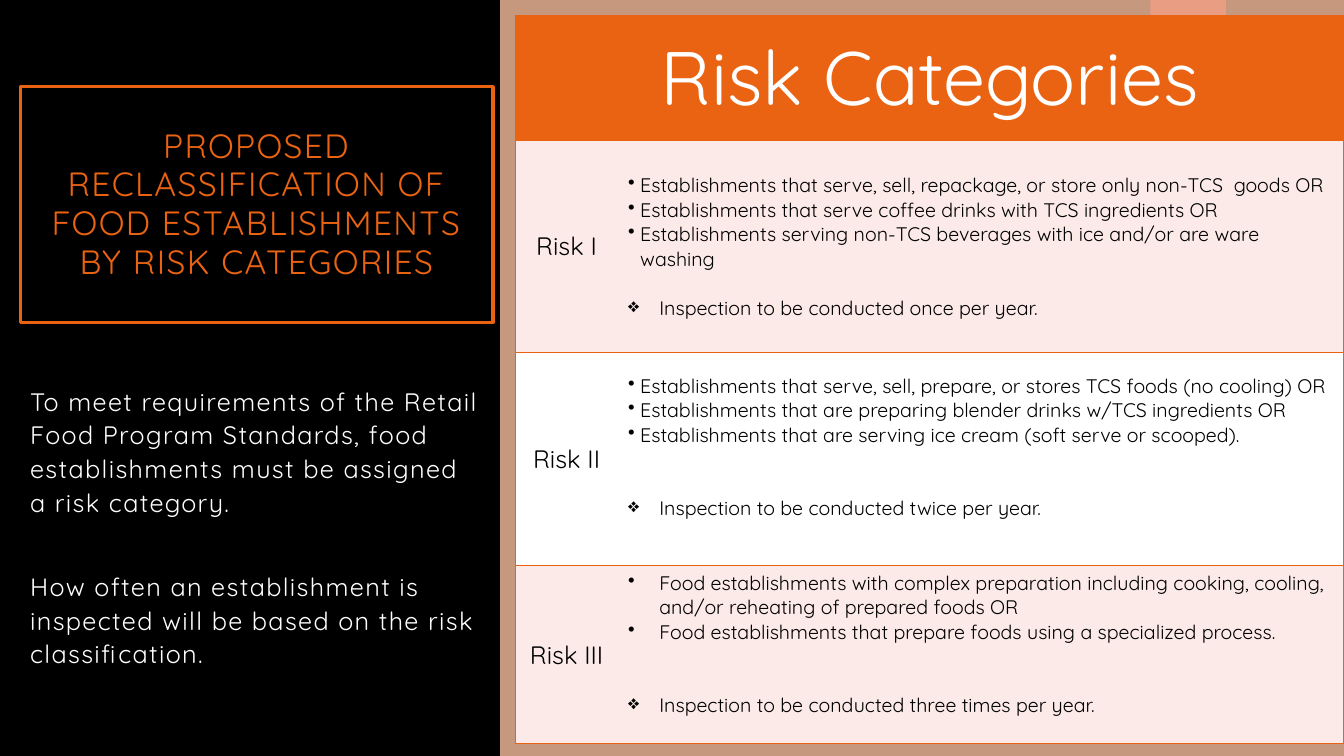
from dataclasses import dataclass

import pptx
import pptx.dml.color
import pptx.enum.shapes
import pptx.enum.text
import pptx.oxml
import pptx.oxml.ns
import pptx.util
from pptx.util import Inches

COLORS = {
    "black": "000000",
    "white": "FFFFFF",
    "orange": "EA6312",
    "peach": "F8C09F",
    "red": "B01513",
    "blush": "FBEAE7",
}
FONT = "Quicksand"
BLANK_LINE = 17.5
CENTER = pptx.enum.text.PP_ALIGN.CENTER
MIDDLE = pptx.enum.text.MSO_ANCHOR.MIDDLE


@dataclass
class RiskCategory:
    name: str
    criteria: list[str]
    inspection: str
    fill: str
    blank_lines: int
    hanging: float = 0.12
    bottom_margin: float = 0.29


RISKS = [
    RiskCategory("Risk I", [
        "Establishments that serve, sell, repackage, or store only non-TCS  goods OR",
        "Establishments that serve coffee drinks with TCS ingredients OR",
        "Establishments serving non-TCS beverages with ice and/or are ware washing",
    ], "Inspection to be conducted once per year.", "blush", 1, bottom_margin=0.05),
    RiskCategory("Risk II", [
        "Establishments that serve, sell, prepare, or stores TCS foods (no cooling) OR",
        "Establishments that are preparing blender drinks w/TCS ingredients OR",
        "Establishments that are serving ice cream (soft serve or scooped).",
    ], "Inspection to be conducted twice per year.", "white", 2),
    RiskCategory("Risk III", [
        "Food establishments with complex preparation including cooking, cooling, "
        "and/or reheating of prepared foods OR",
        "Food establishments that prepare foods using a specialized process.",
    ], "Inspection to be conducted three times per year.", "blush", 2, hanging=0.31),
]


def rgb(name: str) -> pptx.dml.color.RGBColor:
    return pptx.dml.color.RGBColor.from_string(COLORS[name])


def write(frame, text: str, *, size: float, color: str = "black", align=None,
          bullet: str = "", hanging: float = 0, before: float = 0, after: float = 0,
          line_spacing: float = 1.0, tracking: float = 0) -> None:
    """Fill the frame's empty first paragraph, or add another one."""
    paragraph = frame.paragraphs[0]
    if paragraph.runs:
        paragraph = frame.add_paragraph()
    paragraph.alignment = align
    paragraph.line_spacing = line_spacing
    paragraph.space_before = pptx.util.Pt(before)
    paragraph.space_after = pptx.util.Pt(after)
    if bullet:
        properties = paragraph._p.get_or_add_pPr()
        properties.set("marL", str(Inches(hanging)))
        properties.set("indent", str(-Inches(hanging)))
        properties.append(pptx.oxml.parse_xml(
            f'<a:buChar {pptx.oxml.ns.nsdecls("a")} char="{bullet}"/>'))
    run = paragraph.add_run()
    run.text = text
    run.font.name = FONT
    run.font.size = pptx.util.Pt(size)
    run.font.color.rgb = rgb(color)
    if tracking:
        run.font._element.set("spc", str(int(tracking * 100)))


def add_rectangle(slide, left: float, top: float, width: float, height: float, *,
                  fill: str = "", opacity: int = 100, line: str = ""):
    shape = slide.shapes.add_shape(
        pptx.enum.shapes.MSO_SHAPE.RECTANGLE,
        Inches(left), Inches(top), Inches(width), Inches(height))
    shape.shadow.inherit = False
    if fill:
        shape.fill.solid()
        shape.fill.fore_color.rgb = rgb(fill)
        if opacity < 100:
            color = shape._element.spPr.find(".//" + pptx.oxml.ns.qn("a:srgbClr"))
            color.append(pptx.oxml.parse_xml(
                f'<a:alpha {pptx.oxml.ns.nsdecls("a")} val="{opacity * 1000}"/>'))
    else:
        shape.fill.background()
    if line:
        shape.line.color.rgb = rgb(line)
        shape.line.width = pptx.util.Pt(2.25)
    else:
        shape.line.fill.background()
    return shape


def style_cell(cell, fill: str, bordered_sides: str) -> None:
    """Draw orange borders on the given sides (of LRTB), none on the others."""
    properties = cell._tc.get_or_add_tcPr()
    for side in "LRTB":
        paint = (f'<a:solidFill><a:srgbClr val="{COLORS["orange"]}"/></a:solidFill>'
                 if side in bordered_sides else "<a:noFill/>")
        properties.append(pptx.oxml.parse_xml(
            f'<a:ln{side} {pptx.oxml.ns.nsdecls("a")} w="12700">{paint}</a:ln{side}>'))
    cell.fill.solid()
    cell.fill.fore_color.rgb = rgb(fill)
    cell.vertical_anchor = MIDDLE


def add_risk_table(slide) -> None:
    column_widths, row_heights = (1.02, 7.2), (1.24, 2.11, 2.11, 1.77)
    table = slide.shapes.add_table(
        len(row_heights), len(column_widths), Inches(5.11), Inches(0.15),
        Inches(sum(column_widths)), Inches(sum(row_heights))).table
    table.first_row = table.horz_banding = False
    for column, width in zip(table.columns, column_widths):
        column.width = Inches(width)
    for row, height in zip(table.rows, row_heights):
        row.height = Inches(height)

    heading = table.cell(0, 0)
    heading.merge(table.cell(0, 1))
    style_cell(heading, "orange", "LRTB")
    write(heading.text_frame, "Risk Categories", size=54, color="white", align=CENTER)

    for row_index, risk in enumerate(RISKS, start=1):
        label, details = table.cell(row_index, 0), table.cell(row_index, 1)
        style_cell(label, risk.fill, "LTB")
        style_cell(details, risk.fill, "RTB")
        write(label.text_frame, risk.name, size=18, align=CENTER)
        details.margin_bottom = Inches(risk.bottom_margin)
        for criterion in risk.criteria:
            write(details.text_frame, criterion, size=14, bullet="•", hanging=risk.hanging)
        write(details.text_frame, risk.inspection, size=14, bullet="❖", hanging=0.31,
              before=risk.blank_lines * BLANK_LINE)


def main() -> None:
    presentation = pptx.Presentation()
    presentation.slide_width, presentation.slide_height = Inches(13.33), Inches(7.5)
    slide = presentation.slides.add_slide(presentation.slide_layouts[6])
    slide.background.fill.solid()
    slide.background.fill.fore_color.rgb = rgb("black")

    add_rectangle(slide, 11.41, 0, 0.75, 1.25, fill="red")
    add_rectangle(slide, 4.96, 0, 8.37, 7.5, fill="peach", opacity=80)

    title = add_rectangle(slide, 0.2, 0.86, 4.69, 2.34, line="orange").text_frame
    title.word_wrap = True
    title.vertical_anchor = MIDDLE
    write(title, "PROPOSED RECLASSIFICATION OF FOOD ESTABLISHMENTS BY RISK CATEGORIES",
          size=24, color="orange", align=CENTER, line_spacing=0.96, tracking=1)

    body = slide.shapes.add_textbox(
        Inches(0.2), Inches(3.75), Inches(4.69), Inches(3.2)).text_frame
    body.word_wrap = True
    body_format = dict(size=18, color="white", line_spacing=1.11, after=6, tracking=1)
    write(body, "To meet requirements of the Retail Food Program Standards, food "
          "establishments must be assigned a risk category.", **body_format)
    write(body, "How often an establishment is inspected will be based on the risk "
          "classification.", before=30.5, **body_format)

    add_risk_table(slide)
    presentation.save("out.pptx")


if __name__ == "__main__":
    main()
